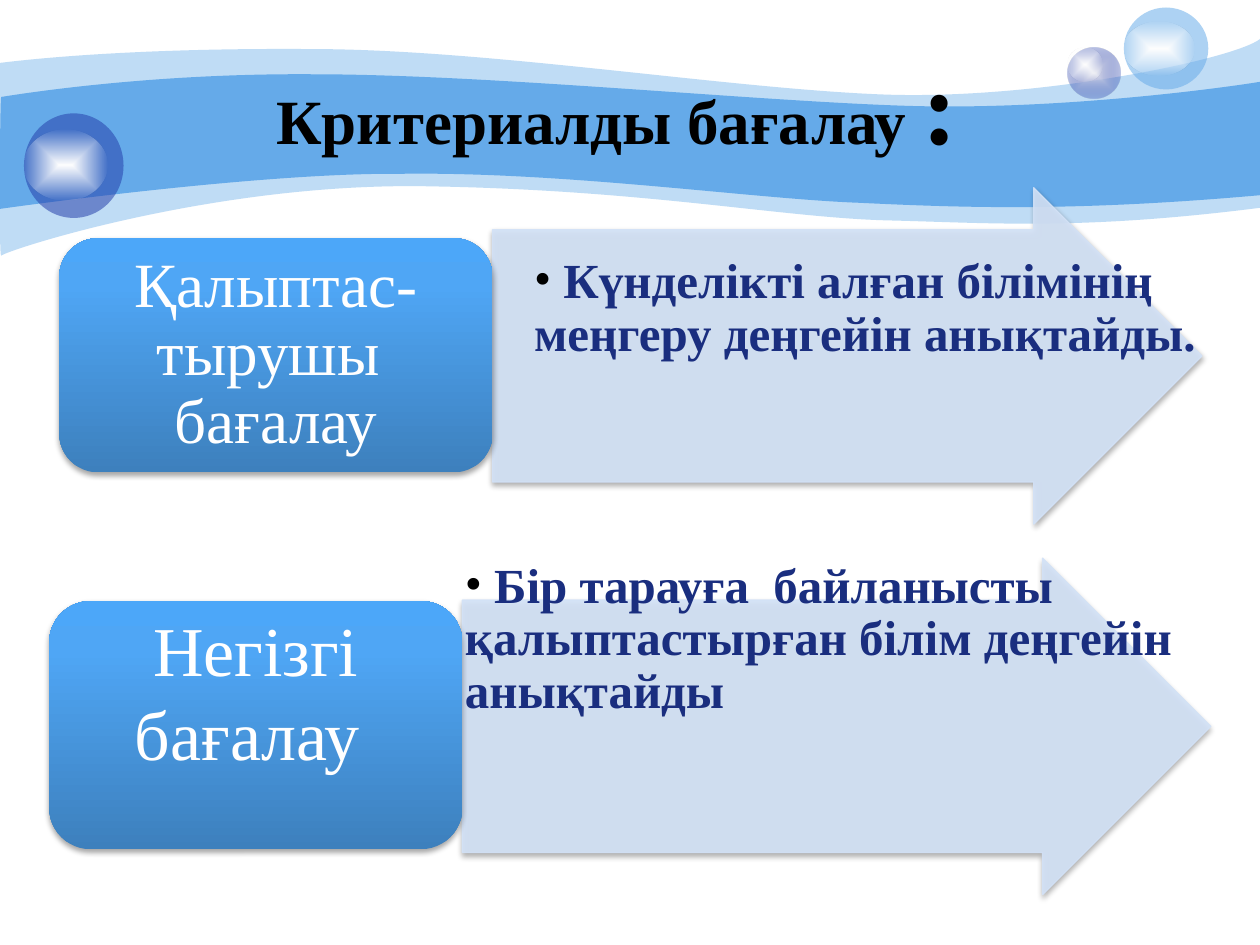
from lxml import etree
from pptx import Presentation
from pptx.dml.color import RGBColor
from pptx.enum.shapes import MSO_SHAPE
from pptx.enum.text import MSO_ANCHOR, MSO_AUTO_SIZE, PP_ALIGN
from pptx.oxml.ns import qn
from pptx.util import Inches, Pt

ARROW, ROUNDED, OVAL = MSO_SHAPE.RIGHT_ARROW, MSO_SHAPE.ROUNDED_RECTANGLE, MSO_SHAPE.OVAL
TOP, MIDDLE = MSO_ANCHOR.TOP, MSO_ANCHOR.MIDDLE
LEFT, CENTER = PP_ALIGN.LEFT, PP_ALIGN.CENTER
FONT = "Times New Roman"
BLACK = RGBColor(0, 0, 0)
WHITE = RGBColor(255, 255, 255)
SKY = RGBColor(0x65, 0xAA, 0xE9)
INDIGO = RGBColor(0x23, 0x3D, 0xA9)
PEARL = RGBColor(0xE1, 0xE2, 0xED)
PALE = RGBColor(0xD3, 0xE2, 0xF7)
NAVY = RGBColor(0x1A, 0x2E, 0x7F)
BLUE_STOPS = [(0, RGBColor(0x3D, 0x80, 0xBD), 100), (80, RGBColor(0x4F, 0xA6, 0xF5), 100),
              (100, RGBColor(0x4C, 0xA7, 0xF9), 100)]
GLOW_STOPS = [(0, WHITE, 100), (100, WHITE, 0)]
PEARL_STOPS = [(0, PEARL, 100), (100, INDIGO, 31)]

TITLE = [("Критериалды бағалау ", 36), (":", 60)]
ROWS = [
    {"label": "Қалыптас-тырушы  бағалау", "size": 36, "spacing": 0.9,
     "label_at": (0.47, 1.89, 3.44, 1.86), "label_insets": (0.15, 0.07, 0.15, 0.07),
     "note": "Күнделікті алған білімінің меңгеру деңгейін анықтайды.",
     "arrow_at": (3.91, 1.49, 5.63, 2.67), "note_insets": (0.33, 0.54, 0.02, 0.02)},
    {"label": "Негізгі бағалау ", "size": 40, "spacing": 1.0,
     "label_at": (0.39, 4.77, 3.28, 1.97), "label_insets": (0.17, 0.08, 0.17, 0.63),
     "note": "Бір тарауға  байланысты қалыптастырған білім деңгейін анықтайды",
     "arrow_at": (3.67, 4.43, 5.94, 2.67), "note_insets": (0.02, 0.02, 0.02, 0.02)},
]
WAVES = [
    (41, (0, 0.5), [
        [(0.24, 0.47), (1.07, 0.38), (2.47, 0.39)],
        [(3.86, 0.39), (5.75, 0.7), (6.99, 0.75)],
        [(8.22, 0.8), (9.8, 0.47), (10, 0.31)],
        [(10, 1.65)],
        [(8.58, 1.83), (7.87, 1.77), (7.05, 1.75)],
        [(6.22, 1.73), (5.15, 1.51), (3.43, 1.48)],
        [(1.72, 1.44), (0.04, 1.99), (0.01, 2.03)],
        [(-0.01, 2.08), (0, 0.75), (0, 0.5)]]),
    (100, (0.01, 0.77), [
        [(0.02, 0.77), (1.1, 0.58), (2.48, 0.59)],
        [(3.86, 0.59), (5.95, 0.8), (7.18, 0.84)],
        [(8.41, 0.88), (9.76, 0.69), (10, 0.65)],
        [(10, 1.55)],
        [(8.53, 1.68), (7.65, 1.65), (6.82, 1.61)],
        [(5.99, 1.58), (4.47, 1.36), (3.17, 1.38)],
        [(2.03, 1.37), (-0.02, 1.66), (-0.01, 1.66)],
        [(0, 1.66), (0, 0.77), (0.01, 0.77)]]),
]
BUBBLES = [
    ((8.47, 0.38, 0.42, 0.4), PEARL_STOPS, (8.47, 0.38, 0.28, 0.27)),
    ((8.92, 0.06, 0.67, 0.65), SKY, (8.92, 0.17, 0.56, 0.43)),
    ((0.19, 0.9, 0.79, 0.83), INDIGO, (0.19, 1.03, 0.66, 0.56)),
]
BUBBLE_OPACITY = 53


def add_node(parent, tag, **attributes):
    return etree.SubElement(parent, qn(tag), {key: str(value) for key, value in attributes.items()})


def add_color(parent, color, opacity):
    node = add_node(parent, "a:srgbClr", val=color)
    if opacity < 100:
        add_node(node, "a:alpha", val=opacity * 1000)


def fill_solid(fill_format, holder, color, opacity):
    fill_format.solid()
    fill_format.fore_color.rgb = color
    if opacity < 100:
        add_node(holder.find(qn("a:solidFill")).find(qn("a:srgbClr")), "a:alpha", val=opacity * 1000)


def fill_gradient(shape, stops, angle=None):
    shape.fill.gradient()
    gradient = shape._element.spPr.find(qn("a:gradFill"))
    for child in list(gradient):
        gradient.remove(child)
    stop_list = add_node(gradient, "a:gsLst")
    for position, color, opacity in stops:
        add_color(add_node(stop_list, "a:gs", pos=position * 1000), color, opacity)
    if angle is None:
        path_node = add_node(gradient, "a:path", path="shape")
        add_node(path_node, "a:fillToRect", l=50000, t=50000, r=50000, b=50000)
    else:
        add_node(gradient, "a:lin", ang=angle * 60000, scaled=0)


def add_plain_shape(slide, kind, at):
    shape = slide.shapes.add_shape(kind, *map(Inches, at))
    shape.shadow.inherit = False
    shape.line.fill.background()
    return shape


def cast_shadow(shape):
    effects = shape._element.spPr.find(qn("a:effectLst"))
    shadow = add_node(effects, "a:outerShdw", blurRad=Pt(3.1), dist=Pt(1.8), dir=90 * 60000, rotWithShape=0)
    add_color(shadow, BLACK, 35)


def add_wave(slide, opacity, start, segments):
    points = [tuple(map(Inches, point)) for segment in segments for point in segment]
    builder = slide.shapes.build_freeform(*map(Inches, start))
    builder.add_line_segments(points, close=True)
    wave = builder.convert_to_shape()
    wave.shadow.inherit = False
    wave.line.fill.background()
    fill_solid(wave.fill, wave._element.spPr, SKY, opacity)
    lines = iter(list(wave._element.iter(qn("a:lnTo"))))
    for segment in segments:
        group = [next(lines) for _ in segment]
        if len(group) == 3:
            curve = etree.Element(qn("a:cubicBezTo"))
            group[0].addprevious(curve)
            for line in group:
                curve.append(line[0])
                line.getparent().remove(line)


def add_bubble(slide, at, paint, glow_at):
    bubble = add_plain_shape(slide, OVAL, at)
    if isinstance(paint, list):
        fill_gradient(bubble, paint)
    else:
        fill_solid(bubble.fill, bubble._element.spPr, paint, BUBBLE_OPACITY)
    fill_gradient(add_plain_shape(slide, OVAL, glow_at), GLOW_STOPS)


def write(shape, spans, size, spacing, insets, anchor, alignment):
    frame = shape.text_frame
    frame.word_wrap = True
    frame.vertical_anchor = anchor
    frame.margin_left, frame.margin_top, frame.margin_right, frame.margin_bottom = map(Inches, insets)
    para = frame.paragraphs[0]
    para.alignment = alignment
    para.line_spacing = spacing
    para.font.name = FONT
    para.font.size = Pt(size)
    for words, color, bold in spans:
        span = para.add_run()
        span.text = words
        span.font.name = FONT
        span.font.size = Pt(size)
        span.font.color.rgb = color
        span.font.bold = bold
    return para


def add_row(slide, row):
    arrow = add_plain_shape(slide, ARROW, row["arrow_at"])
    arrow.adjustments[0], arrow.adjustments[1] = 0.75, 0.5
    fill_solid(arrow.fill, arrow._element.spPr, PALE, 90)
    arrow.line.width = Pt(0.75)
    fill_solid(arrow.line.fill, arrow._element.spPr.find(qn("a:ln")), PALE, 90)
    cast_shadow(arrow)

    note = slide.shapes.add_textbox(*map(Inches, row["arrow_at"]))
    spans = [(" ", BLACK, False), (row["note"], NAVY, True)]
    para = write(note, spans, 28, 0.9, row["note_insets"], TOP, LEFT)
    properties = para._p.get_or_add_pPr()
    properties.set("marL", "0")
    properties.set("indent", "0")
    defaults = properties.find(qn("a:defRPr"))
    defaults.addprevious(etree.Element(qn("a:buFont"), typeface=FONT))
    defaults.addprevious(etree.Element(qn("a:buChar"), char="•"))

    label = add_plain_shape(slide, ROUNDED, row["label_at"])
    fill_gradient(label, BLUE_STOPS, 270)
    cast_shadow(label)
    write(label, [(row["label"], WHITE, False)], row["size"], row["spacing"],
          row["label_insets"], MIDDLE, CENTER)


def add_title(slide):
    title = slide.shapes.title
    title.left, title.top, title.width, title.height = map(Inches, (1.48, 0.55, 6.83, 0.53))
    frame = title.text_frame
    frame.auto_size = MSO_AUTO_SIZE.NONE
    frame.vertical_anchor = MIDDLE
    para = frame.paragraphs[0]
    para.alignment = CENTER
    for words, size in TITLE:
        span = para.add_run()
        span.text = words
        span.font.name = FONT
        span.font.size = Pt(size)
        span.font.bold = True
        span.font.color.rgb = BLACK
    slide.shapes._spTree.append(title._element)


def main():
    deck = Presentation()
    deck.slide_width, deck.slide_height = Inches(10), Inches(7.5)
    slide = deck.slides.add_slide(deck.slide_layouts[5])
    for wave in WAVES:
        add_wave(slide, *wave)
    for bubble in BUBBLES:
        add_bubble(slide, *bubble)
    add_title(slide)
    for row in ROWS:
        add_row(slide, row)
    deck.save("out.pptx")


if __name__ == "__main__":
    main()
